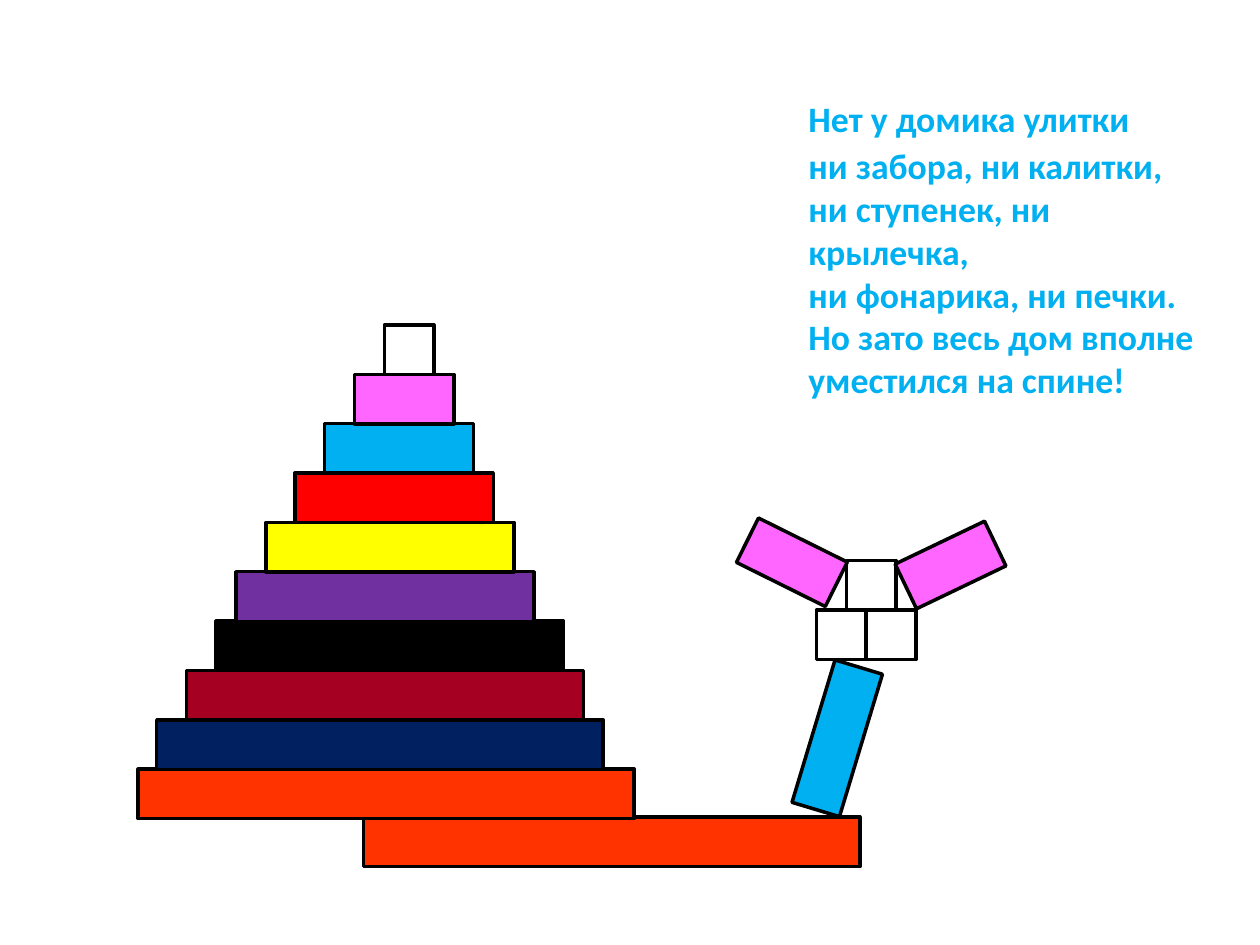
from pptx import Presentation
from pptx import util as u
from pptx.dml import color
from pptx.enum import shapes, text

UNIT = 28.35
LAYER_STEP = 28.2
TOWER_TOP_CENTER = 199.9

ORANGE, SKY, PINK, WHITE = "FF3300", "00B0F0", "FF66FF", "FFFFFF"

SNAIL_BODY = [
    (349.6, 481, 10, 0, ORANGE),
    (478.4, 421.9, 3, 106.8, SKY),
    (480.8, 362.8, 1, 0, WHITE),
    (509.2, 362.8, 1, 0, WHITE),
    (497.9, 334.5, 1, 0, WHITE),
    (452.5, 321.3, 2, 26.4, PINK),
    (543.2, 322.9, 2, 334.4, PINK),
]

SHELL = [
    (220.7, ORANGE), (217.1, "002060"), (220, "A50021"), (222.8, "000000"),
    (220, "7030A0"), (222.8, "FFFF00"), (225.2, "FF0000"), (228.1, SKY),
    (231, PINK), (233.8, WHITE),
]

FIRST_LINE = "Нет у домика\u00a0улитки"
OTHER_LINES = [
    "ни забора, ни калитки,",
    "ни ступенек, ни крылечка,",
    "ни фонарика, ни печки.",
    "Но зато весь дом вполне",
    "уместился на спине!",
]


def rgb(value):
    return color.RGBColor.from_string(value)


def apply_format(target, values):
    for name, value in values.items():
        setattr(target, name, value)


def add_rod(page, center_x, center_y, units, rotation, fill):
    width = units * UNIT
    rod = page.shapes.add_shape(
        shapes.MSO_SHAPE.RECTANGLE,
        u.Pt(center_x - width / 2), u.Pt(center_y - UNIT / 2),
        u.Pt(width), u.Pt(UNIT))
    rod.rotation = rotation
    rod.shadow.inherit = False
    rod.fill.solid()
    rod.fill.fore_color.rgb = rgb(fill)
    rod.line.color.rgb = rgb("000000")
    rod.line.width = u.Pt(2)


def add_shell(page):
    for level, (center_x, fill) in enumerate(SHELL):
        units = len(SHELL) - level
        center_y = TOWER_TOP_CENTER + (units - 1) * LAYER_STEP
        add_rod(page, center_x, center_y, units, 0, fill)


def add_poem(page):
    box = page.shapes.add_textbox(u.Pt(462), u.Pt(55.5), u.Pt(234), u.Pt(180))
    frame = box.text_frame
    apply_format(frame, {
        "word_wrap": True, "vertical_anchor": text.MSO_ANCHOR.TOP,
        "margin_left": 0, "margin_right": 0, "margin_top": 0, "margin_bottom": 0,
    })
    first, rest = frame.paragraphs[0], frame.add_paragraph()
    first.text = FIRST_LINE
    first.space_after = u.Pt(2.2)
    rest.text = "\v".join(OTHER_LINES)
    for para in (first, rest):
        for span in para.runs:
            apply_format(span.font, {"name": "Calibri", "size": u.Pt(20.4), "bold": True})
            span.font.color.rgb = rgb(SKY)


def main():
    deck = Presentation()
    deck.slide_width, deck.slide_height = u.Pt(720), u.Pt(540)
    page = deck.slides.add_slide(deck.slide_layouts[6])
    add_poem(page)
    for rod in SNAIL_BODY:
        add_rod(page, *rod)
    add_shell(page)
    deck.save("out.pptx")


if __name__ == "__main__":
    main()
